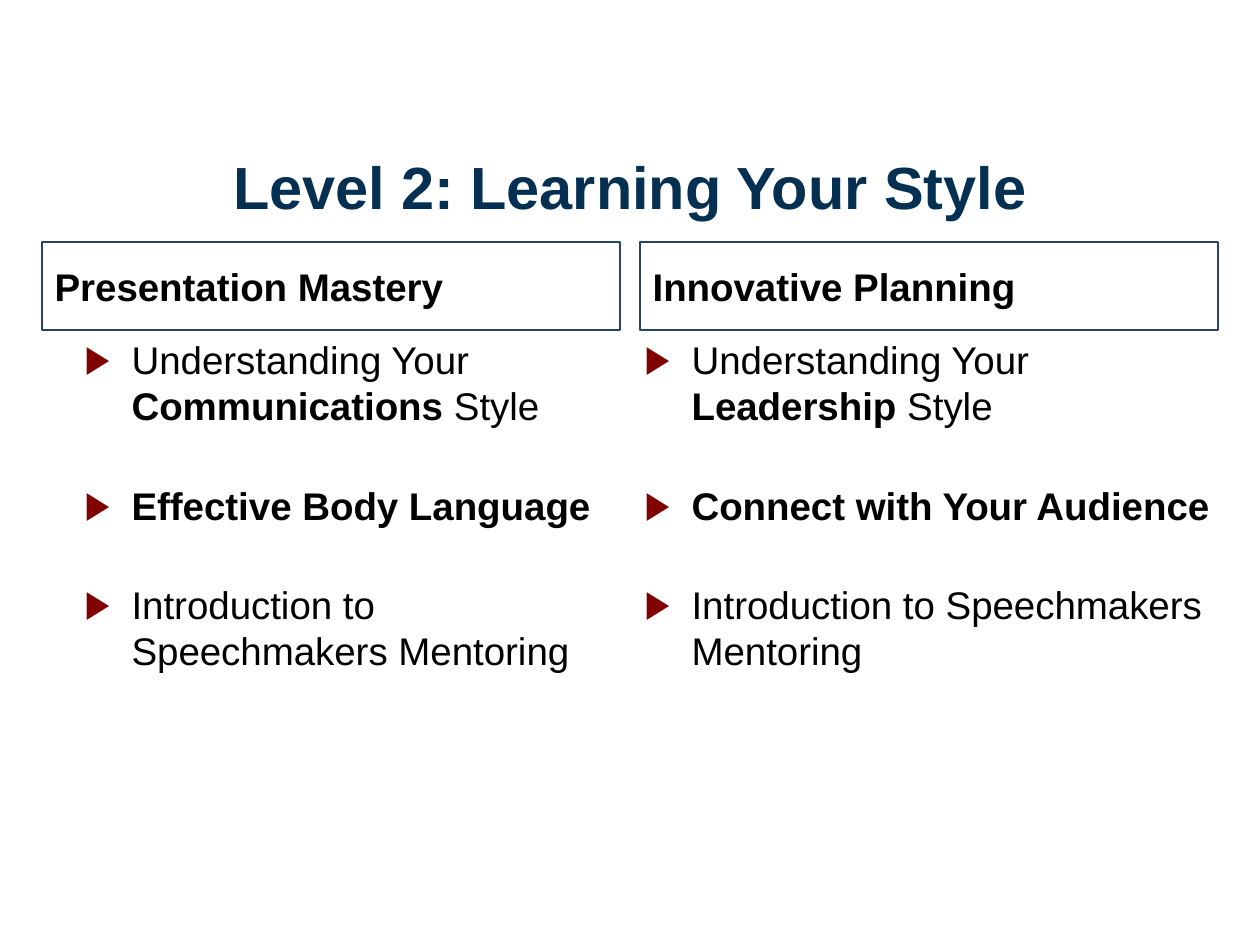
from lxml.etree import SubElement
from pptx import Presentation
from pptx.dml.color import RGBColor
from pptx.enum.text import MSO_ANCHOR, MSO_AUTO_SIZE, PP_ALIGN
from pptx.oxml.ns import qn
from pptx.util import Emu, Pt

EMU_PER_PX = 914400 / 126
NAVY, BORDER, BLACK, MAROON = "063052", "294364", "000000", "800000"
HEADING_HEIGHT = 88
BULLET_INDENT = 47
BULLET_GAP = 53


def px(length):
    return Emu(round(length * EMU_PER_PX))


def color(value):
    return RGBColor.from_string(value)


def place(placeholder, box, anchor):
    placeholder.left, placeholder.top, placeholder.width, placeholder.height = map(px, box)
    frame = placeholder.text_frame
    frame.word_wrap = True
    frame.auto_size = MSO_AUTO_SIZE.NONE
    frame.vertical_anchor = anchor
    return frame


def format_run(run, size, bold, ink=BLACK):
    run.font.name = "Arial"
    run.font.size = Pt(size)
    run.font.bold = bold
    run.font.color.rgb = color(ink)


def add_bullet(paragraph):
    properties = paragraph._p.get_or_add_pPr()
    properties.set("marL", str(px(BULLET_INDENT)))
    properties.set("indent", str(-px(BULLET_INDENT)))
    bullet_color = SubElement(properties, qn("a:buClr"))
    SubElement(bullet_color, qn("a:srgbClr"), val=MAROON)
    SubElement(properties, qn("a:buFont"), typeface="Arial")
    SubElement(properties, qn("a:buChar"), char="▶")


def add_title(placeholder, box, title):
    frame = place(placeholder, box, MSO_ANCHOR.MIDDLE)
    frame.text = title
    heading = frame.paragraphs[0]
    heading.alignment = PP_ALIGN.CENTER
    format_run(heading.runs[0], 34, True, NAVY)


def add_heading(placeholder, box, path_name):
    frame = place(placeholder, box, MSO_ANCHOR.MIDDLE)
    placeholder.line.color.rgb = color(BORDER)
    placeholder.line.width = Pt(0.75)
    frame.text = path_name
    heading = frame.paragraphs[0]
    heading.space_before = Pt(0)
    format_run(heading.runs[0], 22, True)


def add_projects(placeholder, box, projects):
    frame = place(placeholder, box, MSO_ANCHOR.TOP)
    for index, project in enumerate(projects):
        paragraph = frame.add_paragraph() if index else frame.paragraphs[0]
        paragraph.space_before = px(BULLET_GAP if index else 0)
        add_bullet(paragraph)
        for words, bold in project:
            run = paragraph.add_run()
            run.text = words
            format_run(run, 22, bold)


def add_path_column(heading, projects_list, box, list_shift, list_width, path_name, style, skill):
    left, top, width, height = box
    add_heading(heading, (left, top, width, HEADING_HEIGHT), path_name)
    list_box = (left + list_shift, top + HEADING_HEIGHT, list_width, height - HEADING_HEIGHT)
    add_projects(projects_list, list_box, [
        [("Understanding Your ", False), (style, True), (" Style", False)],
        [(skill, True)],
        [("Introduction to Speechmakers Mentoring", False)],
    ])


def main():
    presentation = Presentation()
    presentation.slide_width, presentation.slide_height = px(1260), px(945)
    slide = presentation.slides.add_slide(presentation.slide_layouts.get_by_name("Comparison"))
    title, left_heading, left_list, right_heading, right_list = slide.placeholders
    add_title(title, (0, 120, 1260, 132), "Level 2: Learning Your Style")
    add_path_column(left_heading, left_list, (42, 242, 578, 577), 30, 548,
                    "Presentation Mastery", "Communications", "Effective Body Language")
    add_path_column(right_heading, right_list, (640, 242, 578, 577), -8, 611,
                    "Innovative Planning", "Leadership", "Connect with Your Audience")
    presentation.save("out.pptx")


if __name__ == "__main__":
    main()
